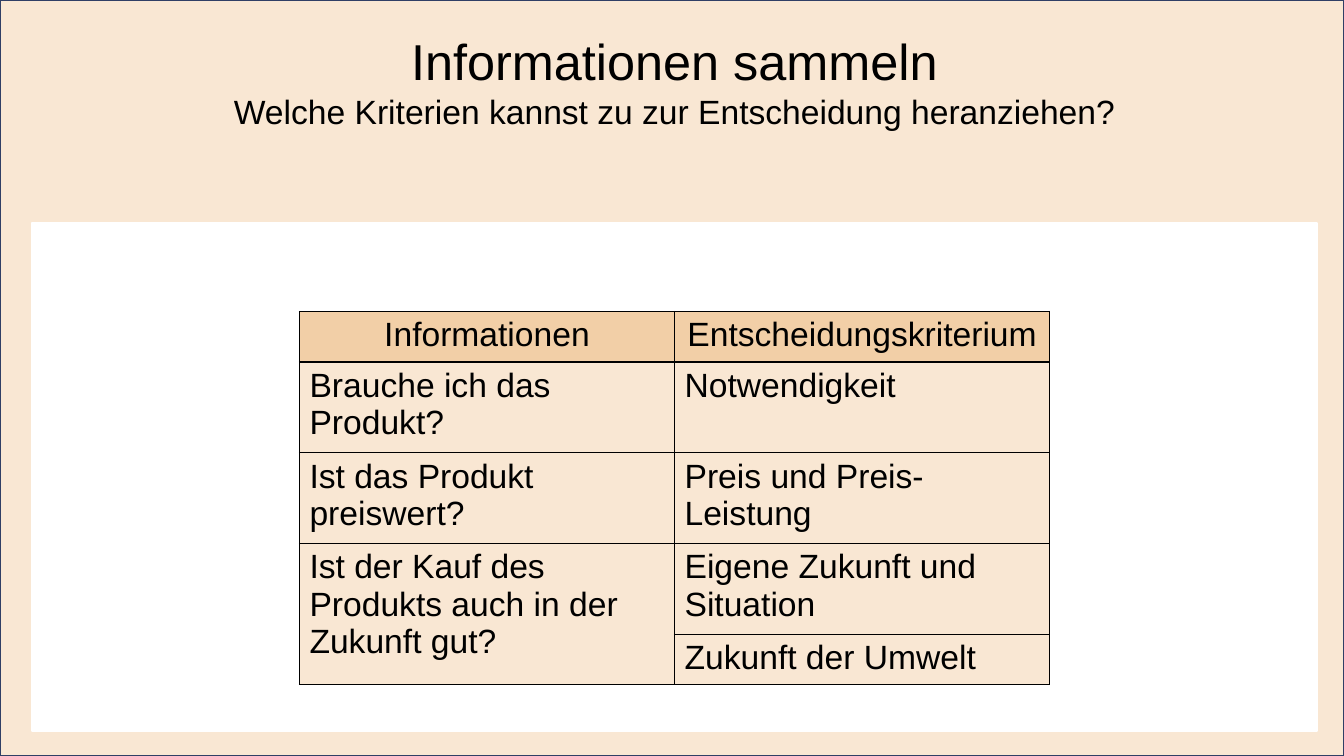
from dataclasses import dataclass

from lxml.etree import SubElement
from pptx import Presentation
from pptx.dml.color import RGBColor
from pptx.enum.shapes import MSO_SHAPE as Shape
from pptx.enum.text import MSO_ANCHOR as Anchor, MSO_AUTO_SIZE as AutoSize, PP_ALIGN as Align
from pptx.oxml.ns import qn
from pptx.util import Inches, Pt

BLACK = RGBColor(0x00, 0x00, 0x00)
WHITE = RGBColor(0xFF, 0xFF, 0xFF)
NAVY = RGBColor(0x30, 0x3F, 0x65)
CREAM = RGBColor(0xF9, 0xE7, 0xD3)
APRICOT = RGBColor(0xF2, 0xCF, 0xA7)

FONT = "Arial"
TITLE_SIZE = 36
TEXT_SIZE = 24
WIDTH = Inches(13.33)
HEIGHT = Inches(7.5)

COLUMN_SHARE = 27.91
SINGLE_ROW = 6.67
DOUBLE_ROW = 12


@dataclass(frozen=True)
class Area:
    left: float
    top: float
    width: float
    height: float

    def lengths(self) -> tuple[int, int, int, int]:
        return (across(self.left), down(self.top), across(self.width), down(self.height))


@dataclass(frozen=True)
class Panel:
    area: Area
    fill: RGBColor
    line: RGBColor


@dataclass(frozen=True)
class Row:
    information: str
    criterion: str
    height: float


PANELS = [
    Panel(Area(0, 0, 100, 100), CREAM, NAVY),
    Panel(Area(2.4, 29.47, 95.57, 67.2), WHITE, WHITE),
]
TITLE_AREA = Area(2.4, 3.33, 95.57, 14.8)
HEADINGS = [
    ("Informationen sammeln", TITLE_SIZE),
    ("Welche Kriterien kannst zu zur Entscheidung heranziehen?", TEXT_SIZE),
]
ROWS = [
    Row("Informationen", "Entscheidungskriterium", SINGLE_ROW),
    Row("Brauche ich das Produkt?", "Notwendigkeit", DOUBLE_ROW),
    Row("Ist das Produkt preiswert?", "Preis und Preis-Leistung", DOUBLE_ROW),
    Row("Ist der Kauf des Produkts auch in der Zukunft gut?", "Eigene Zukunft und Situation", DOUBLE_ROW),
    Row("", "Zukunft der Umwelt", SINGLE_ROW),
]
TABLE_AREA = Area(22.28, 41.2, 2 * COLUMN_SHARE, sum(row.height for row in ROWS))


def across(share: float) -> int:
    return round(WIDTH * share / 100)


def down(share: float) -> int:
    return round(HEIGHT * share / 100)


def write(para, text: str, size: int, align: Align) -> None:
    para.alignment = align
    span = para.add_run()
    span.text = text
    span.font.name = FONT
    span.font.size = Pt(size)
    span.font.color.rgb = BLACK


def draw_panel(page, panel: Panel) -> None:
    box = page.shapes.add_shape(Shape.RECTANGLE, *panel.area.lengths())
    box.shadow.inherit = False
    box.fill.solid()
    box.fill.fore_color.rgb = panel.fill
    box.line.color.rgb = panel.line
    box.line.width = Pt(1.25)


def draw_title(page) -> None:
    title = page.shapes.title
    title.left, title.top, title.width, title.height = TITLE_AREA.lengths()
    page.shapes[-1].element.addnext(title.element)
    frame = title.text_frame
    frame.word_wrap = True
    frame.auto_size = AutoSize.SHAPE_TO_FIT_TEXT
    frame.vertical_anchor = Anchor.TOP
    for index, (text, size) in enumerate(HEADINGS):
        para = frame.add_paragraph() if index else frame.paragraphs[0]
        write(para, text, size, Align.CENTER)


def outline_cell(cell) -> None:
    properties = cell._tc.get_or_add_tcPr()
    for index, side in enumerate(("a:lnL", "a:lnR", "a:lnT", "a:lnB")):
        line = SubElement(properties, qn(side), w=str(Pt(1)))
        SubElement(SubElement(line, qn("a:solidFill")), qn("a:srgbClr"), val=str(BLACK))
        properties.insert(index, line)


def draw_table(page) -> None:
    table = page.shapes.add_table(len(ROWS), 2, *TABLE_AREA.lengths()).table
    table.first_row = False
    table.horz_banding = False
    for column in table.columns:
        column.width = across(COLUMN_SHARE)
    for index, row in enumerate(ROWS):
        table.rows[index].height = down(row.height)
        heading = index == 0
        for number, text in enumerate((row.information, row.criterion)):
            cell = table.cell(index, number)
            cell.fill.solid()
            cell.fill.fore_color.rgb = APRICOT if heading else CREAM
            outline_cell(cell)
            if text:
                write(cell.text_frame.paragraphs[0], text, TEXT_SIZE, Align.CENTER if heading else Align.LEFT)
    table.cell(3, 0).merge(table.cell(4, 0))


def main() -> None:
    deck = Presentation()
    deck.slide_width = WIDTH
    deck.slide_height = HEIGHT
    page = deck.slides.add_slide(deck.slide_layouts[5])
    for panel in PANELS:
        draw_panel(page, panel)
    draw_title(page)
    draw_table(page)
    deck.save("out.pptx")


if __name__ == "__main__":
    main()
